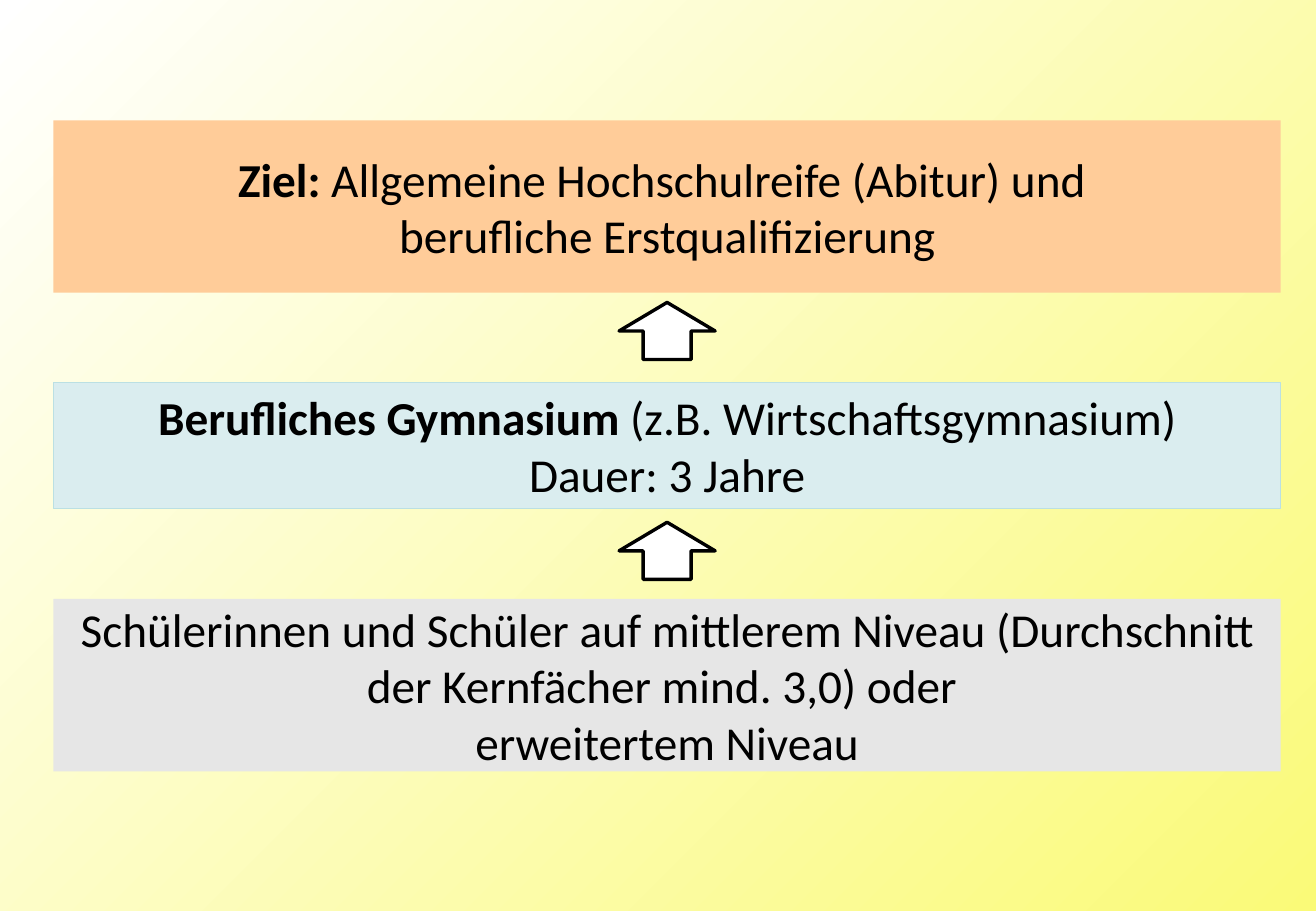
from pptx import Presentation
from pptx.dml.color import RGBColor
from pptx.enum.shapes import MSO_SHAPE
from pptx.enum.text import MSO_ANCHOR, PP_ALIGN
from pptx.util import Inches, Pt

BLACK = RGBColor(0x00, 0x00, 0x00)
WHITE = RGBColor(0xFF, 0xFF, 0xFF)
YELLOW = RGBColor(0xFA, 0xFA, 0x78)
ORANGE = RGBColor(0xFF, 0xCC, 0x99)
PALE_TEAL = RGBColor(0xDA, 0xED, 0xEF)
TEAL = RGBColor(0xBB, 0xE0, 0xE3)
GREY = RGBColor(0xE6, 0xE6, 0xE6)

BOX_LEFT, BOX_WIDTH = 0.44, 10.1
ARROW_WIDTH, ARROW_HEIGHT = 0.79, 0.47


class SlideBuilder:
    font_name = "Calibri"
    font_size = Pt(28)

    def __init__(self, presentation):
        self.slide = presentation.slides.add_slide(presentation.slide_layouts[6])

    def gradient_background(self, start, end):
        fill = self.slide.background.fill
        fill.gradient()
        fill.gradient_angle = 315
        for stop, color, position in zip(fill.gradient_stops, (start, end), (0, 1)):
            stop.color.rgb = color
            stop.position = position

    def shape(self, kind, left, top, width, height, color, line=None, line_width=0.75):
        shape = self.slide.shapes.add_shape(
            kind, Inches(left), Inches(top), Inches(width), Inches(height))
        shape.shadow.inherit = False
        shape.fill.solid()
        shape.fill.fore_color.rgb = color
        if line is None:
            shape.line.fill.background()
        else:
            shape.line.color.rgb = line
            shape.line.width = Pt(line_width)
        return shape

    def box(self, top, height, color, paragraphs, line=None, anchor=MSO_ANCHOR.MIDDLE):
        """Add a full-width box; each paragraph is a list of (text, bold) runs."""
        box = self.shape(MSO_SHAPE.RECTANGLE, BOX_LEFT, top, BOX_WIDTH, height, color, line)
        frame = box.text_frame
        frame.word_wrap = True
        frame.vertical_anchor = anchor
        for index, runs in enumerate(paragraphs):
            paragraph = frame.add_paragraph() if index else frame.paragraphs[0]
            paragraph.alignment = PP_ALIGN.CENTER
            for text, bold in runs:
                run = paragraph.add_run()
                run.text = text
                run.font.name = self.font_name
                run.font.size = self.font_size
                run.font.bold = bold
                run.font.color.rgb = BLACK

    def up_arrow(self, top):
        left = BOX_LEFT + (BOX_WIDTH - ARROW_WIDTH) / 2
        self.shape(MSO_SHAPE.UP_ARROW, left, top, ARROW_WIDTH, ARROW_HEIGHT, WHITE, BLACK, 2)


def main():
    presentation = Presentation()
    presentation.slide_width = Inches(10.83)
    presentation.slide_height = Inches(7.5)

    builder = SlideBuilder(presentation)
    builder.gradient_background(WHITE, YELLOW)
    builder.box(0.99, 1.42, ORANGE, [
        [("Ziel:", True), (" Allgemeine Hochschulreife (Abitur) und ", False)],
        [("berufliche Erstqualifizierung", False)],
    ])
    builder.box(4.93, 1.42, GREY, [
        [("Schülerinnen und Schüler auf mittlerem Niveau (Durchschnitt "
          "der Kernfächer mind. 3,0) oder ", False)],
        [("erweitertem Niveau", False)],
    ])
    builder.box(3.15, 1.04, PALE_TEAL, [
        [("Berufliches Gymnasium ", True), ("(z.B. Wirtschaftsgymnasium)", False)],
        [("Dauer: 3 Jahre", False)],
    ], line=TEAL, anchor=MSO_ANCHOR.TOP)
    for top in (4.3, 2.49):
        builder.up_arrow(top)

    presentation.save("out.pptx")


if __name__ == "__main__":
    main()
